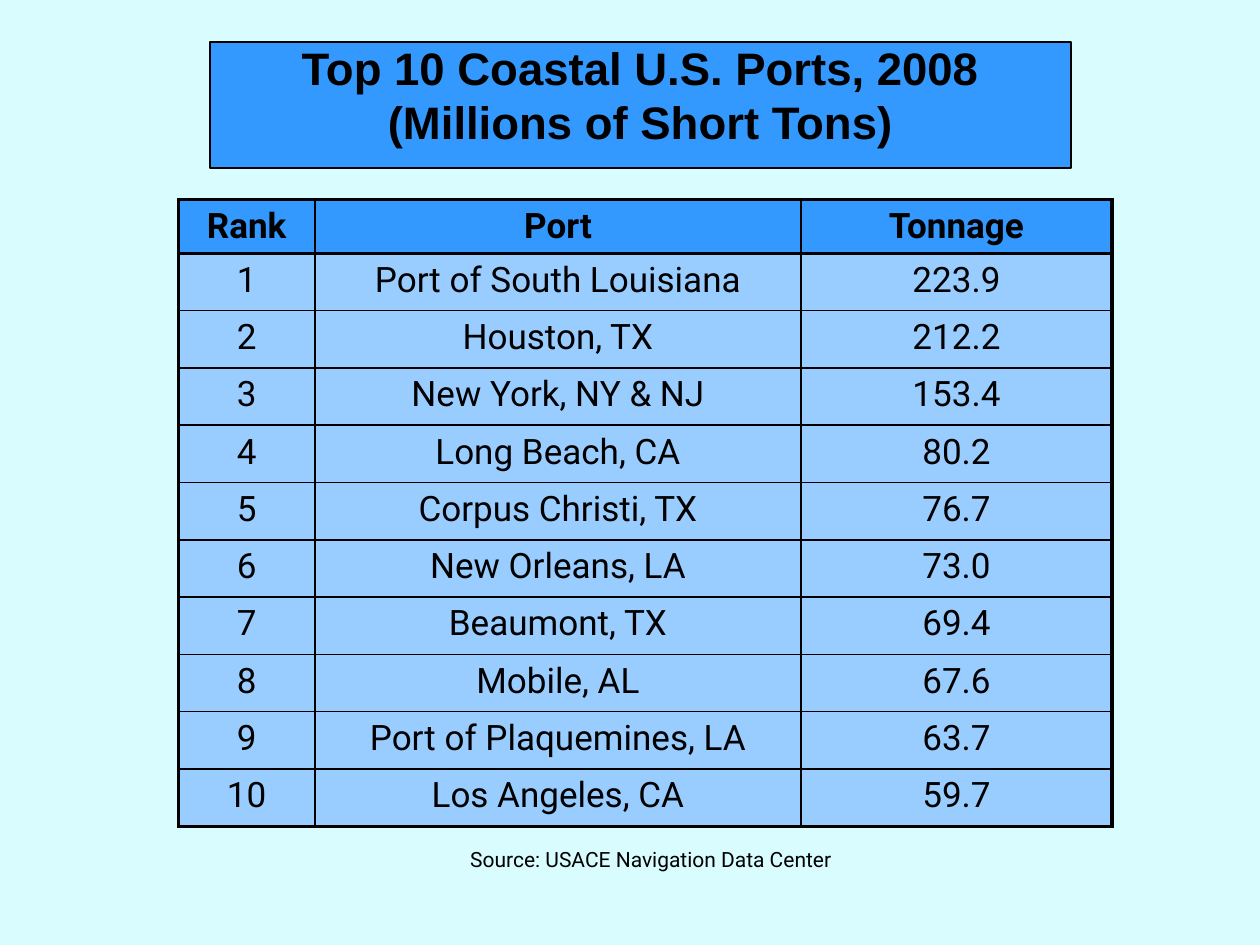
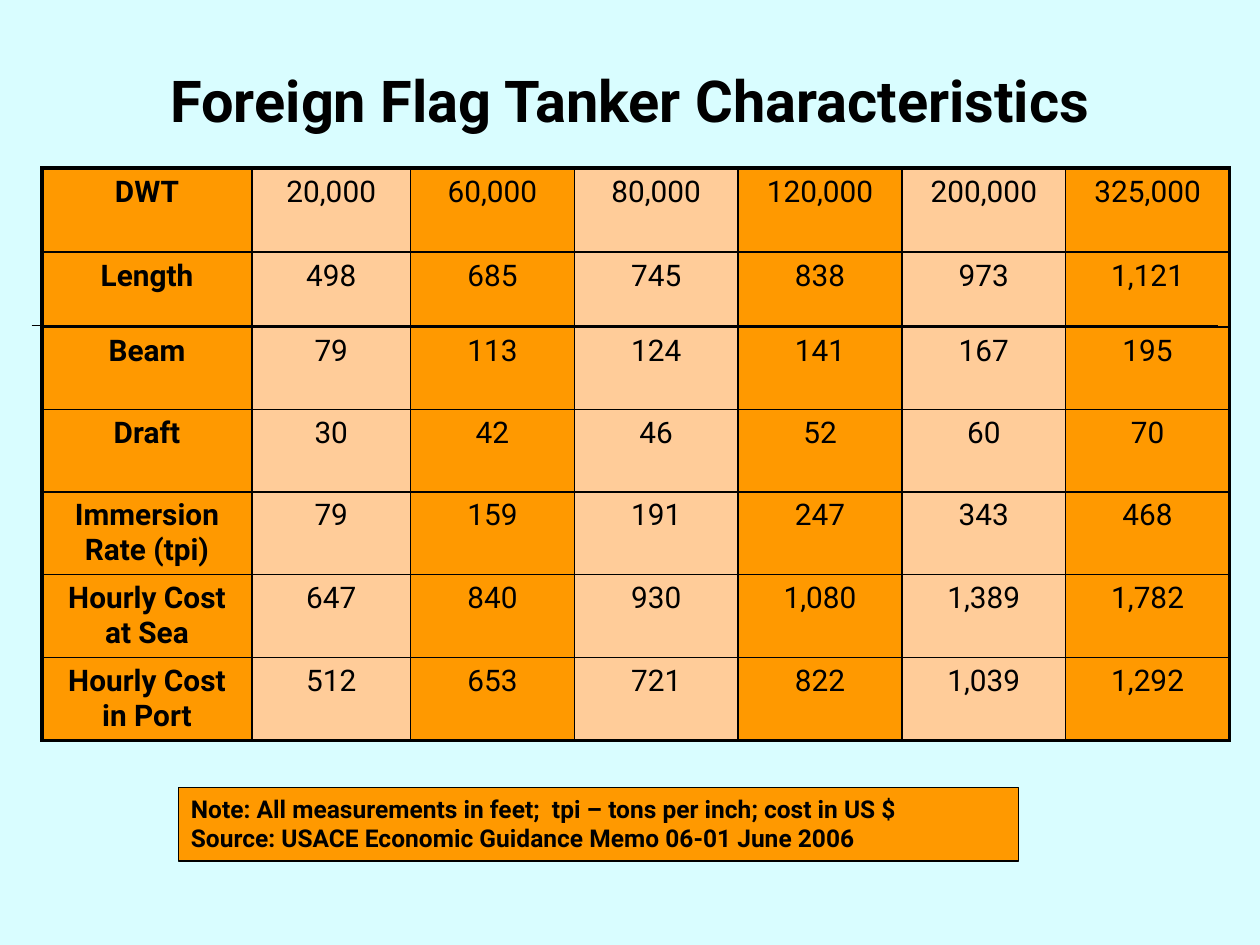
"""Build two slides on coastal port tonnage and tanker characteristics."""
from dataclasses import dataclass

from lxml import etree
from pptx import Presentation
from pptx.dml.color import RGBColor
from pptx.enum.dml import MSO_THEME_COLOR
from pptx.enum.shapes import MSO_CONNECTOR, MSO_SHAPE
from pptx.enum.text import MSO_ANCHOR, MSO_AUTO_SIZE, PP_ALIGN
from pptx.oxml.ns import qn
from pptx.util import Inches, Pt

RECTANGLE = MSO_SHAPE.RECTANGLE
STRAIGHT = MSO_CONNECTOR.STRAIGHT
MIDDLE, TOP = MSO_ANCHOR.MIDDLE, MSO_ANCHOR.TOP
CENTER, LEFT = PP_ALIGN.CENTER, PP_ALIGN.LEFT
NO_FIT = MSO_AUTO_SIZE.NONE
INK = MSO_THEME_COLOR.TEXT_1
COLUMNS, ROWS = 120, 90


@dataclass(frozen=True)
class Theme:
    """Colours, fonts, type sizes and line widths."""
    background: str = "D9FDFF"
    black: str = "000000"
    blue: str = "3399FF"
    pale_blue: str = "99CCFF"
    orange: str = "FF9900"
    pale_orange: str = "FFCC99"
    title_font: str = "Arial"
    body_font: str = "Roboto"
    port_title: int = 26
    tanker_title: int = 33
    port_cell: int = 20
    tanker_cell: int = 17
    note: int = 14
    source: int = 12
    thick: float = 2.25
    thin: float = 1
    hairline: float = 0.75


PORTS = [
    ("Port of South Louisiana", "223.9"),
    ("Houston, TX", "212.2"),
    ("New York, NY & NJ", "153.4"),
    ("Long Beach, CA", "80.2"),
    ("Corpus Christi, TX", "76.7"),
    ("New Orleans, LA", "73.0"),
    ("Beaumont, TX", "69.4"),
    ("Mobile, AL", "67.6"),
    ("Port of Plaquemines, LA", "63.7"),
    ("Los Angeles, CA", "59.7"),
]
TANKERS = [
    ("DWT", "20,000", "60,000", "80,000", "120,000", "200,000", "325,000"),
    ("Length", "498", "685", "745", "838", "973", "1,121"),
    ("Beam", "79", "113", "124", "141", "167", "195"),
    ("Draft", "30", "42", "46", "52", "60", "70"),
    ("Immersion Rate (tpi)", "79", "159", "191", "247", "343", "468"),
    ("Hourly Cost at Sea", "647", "840", "930", "1,080", "1,389", "1,782"),
    ("Hourly Cost in Port", "512", "653", "721", "822", "1,039", "1,292"),
]


class Composer:
    """Holds the theme and current slide, and places elements on the grid."""

    def __init__(self, theme):
        self.theme = theme
        self.deck = Presentation()
        self.deck.slide_width, self.deck.slide_height = Inches(10), Inches(7.5)
        self.paint(self.deck.slide_master.background.fill, theme.background)
        self.page = None

    def across(self, columns):
        """Turn grid columns into a length."""
        return round(self.deck.slide_width * columns / COLUMNS)

    def down(self, rows):
        """Turn grid rows into a length."""
        return round(self.deck.slide_height * rows / ROWS)

    def frame(self, left, top, width, height):
        """Turn a grid rectangle into lengths."""
        return self.across(left), self.down(top), self.across(width), self.down(height)

    def paint(self, fill, color):
        """Make a fill solid."""
        fill.solid()
        fill.fore_color.rgb = RGBColor.from_string(color)

    def set_text(self, text_frame, text, size, bold=False, align=CENTER, font=None):
        """Fill a text frame with one formatted paragraph."""
        text_frame.text = text
        para = text_frame.paragraphs[0]
        para.alignment = align
        para.space_before = Pt(0)
        para.font.name = font or self.theme.body_font
        para.font.size = Pt(size)
        para.font.bold = bold
        para.font.color.theme_color = INK

    def new_page(self):
        """Start a title-only slide."""
        self.page = self.deck.slides.add_slide(self.deck.slide_layouts[5])

    def title(self, text, place, size, font=None):
        """Place and format the title."""
        box = self.page.shapes.title
        box.left, box.top, box.width, box.height = self.frame(*place)
        text_frame = box.text_frame
        text_frame.auto_size = NO_FIT
        text_frame.vertical_anchor = MIDDLE
        self.set_text(text_frame, text, size, bold=True, font=font)

    def panel(self, place, color, line_width):
        """Add a filled rectangle with a black outline."""
        box = self.page.shapes.add_shape(RECTANGLE, *self.frame(*place))
        box.shadow.inherit = False
        self.paint(box.fill, color)
        self.paint(box.line.fill, self.theme.black)
        box.line.width = Pt(line_width)
        return box

    def title_band(self, place, color):
        """Put a panel behind the title."""
        band = self.panel(place, color, self.theme.thin)
        self.page.shapes.title.element.addprevious(band.element)

    def note(self, text, place, color):
        """Add a panel with a bold note."""
        box = self.panel(place, color, self.theme.hairline)
        box.text_frame.word_wrap = True
        box.text_frame.vertical_anchor = TOP
        self.set_text(box.text_frame, text, self.theme.note, bold=True, align=LEFT)

    def caption(self, text, place):
        """Add a centred source line."""
        box = self.page.shapes.add_textbox(*self.frame(*place))
        box.text_frame.word_wrap = True
        self.set_text(box.text_frame, text, self.theme.source)

    def rule(self, left, right, top):
        """Add a horizontal hairline."""
        height = self.down(top)
        line = self.page.shapes.add_connector(
            STRAIGHT, self.across(left), height, self.across(right), height)
        self.paint(line.line.fill, self.theme.black)
        line.line.width = Pt(self.theme.hairline)
        etree.SubElement(line.element.spPr, qn("a:effectLst"))

    def border(self, cell, side, width):
        """Draw one side of a cell."""
        properties = cell._tc.get_or_add_tcPr()
        line = etree.SubElement(properties, qn(f"a:ln{side}"), w=str(Pt(width)))
        fill = etree.SubElement(line, qn("a:solidFill"))
        etree.SubElement(fill, qn("a:srgbClr"), val=self.theme.black)

    def table(self, data, corner, widths, heights, size, is_head, color_of, thick_rows):
        """Add a table; thick_rows lists the horizontal lines drawn thick."""
        place = self.frame(*corner, sum(widths), sum(heights))
        table = self.page.shapes.add_table(len(heights), len(widths), *place).table
        table.first_row = table.horz_banding = False
        for column, width in zip(table.columns, widths):
            column.width = self.across(width)
        for row, height in zip(table.rows, heights):
            row.height = self.down(height)
        thick_columns = (0, len(widths))
        for r, values in enumerate(data):
            for c, value in enumerate(values):
                cell = table.cell(r, c)
                self.set_text(cell.text_frame, value, size, bold=is_head(r, c))
                edges = (("L", c, thick_columns), ("R", c + 1, thick_columns),
                         ("T", r, thick_rows), ("B", r + 1, thick_rows))
                for side, edge, thick_edges in edges:
                    thick = edge in thick_edges
                    self.border(cell, side, self.theme.thick if thick else self.theme.thin)
                self.paint(cell.fill, color_of(r, c))


def port_page(composer):
    """Build the ranking of ports."""
    theme = composer.theme
    composer.new_page()
    composer.title("Top 10 Coastal U.S. Ports, 2008\v(Millions of Short Tons)",
                   (16, 2, 90, 14), theme.port_title, theme.title_font)
    composer.title_band((20, 4, 82, 12), theme.blue)
    ranking = [(str(rank), *port) for rank, port in enumerate(PORTS, 1)]
    composer.table(
        [("Rank", "Port", "Tonnage"), *ranking], (17, 19),
        widths=[13, 46.3, 29.6], heights=[5.1] + [5.46] * len(PORTS),
        size=theme.port_cell,
        is_head=lambda r, c: r == 0,
        color_of=lambda r, c: theme.pale_blue if r else theme.blue,
        thick_rows=(0, 1, len(PORTS) + 1))
    composer.caption("Source: USACE Navigation Data Center", (30, 80, 64, 3.6))


def tanker_page(composer):
    """Build the comparison of tankers."""
    theme = composer.theme
    composer.new_page()
    composer.title("Foreign Flag Tanker Characteristics", (7, 5, 106, 9), theme.tanker_title)
    composer.table(
        TANKERS, (4, 16),
        widths=[20, 15.1] + [15.6] * 5, heights=[8, 7.15] + [7.85] * 5,
        size=theme.tanker_cell,
        is_head=lambda r, c: c == 0,
        color_of=lambda r, c: theme.pale_orange if c % 2 else theme.orange,
        thick_rows=(0, len(TANKERS)))
    composer.note("Note: All measurements in feet;  tpi – tons per inch; cost in US $\v"
                  "Source: USACE Economic Guidance Memo 06-01 June 2006",
                  (17, 75, 80, 7), theme.orange)
    composer.rule(3, 116, 31)


def main():
    """Build and save the deck."""
    composer = Composer(Theme())
    port_page(composer)
    tanker_page(composer)
    composer.deck.save("out.pptx")


if __name__ == "__main__":
    main()
